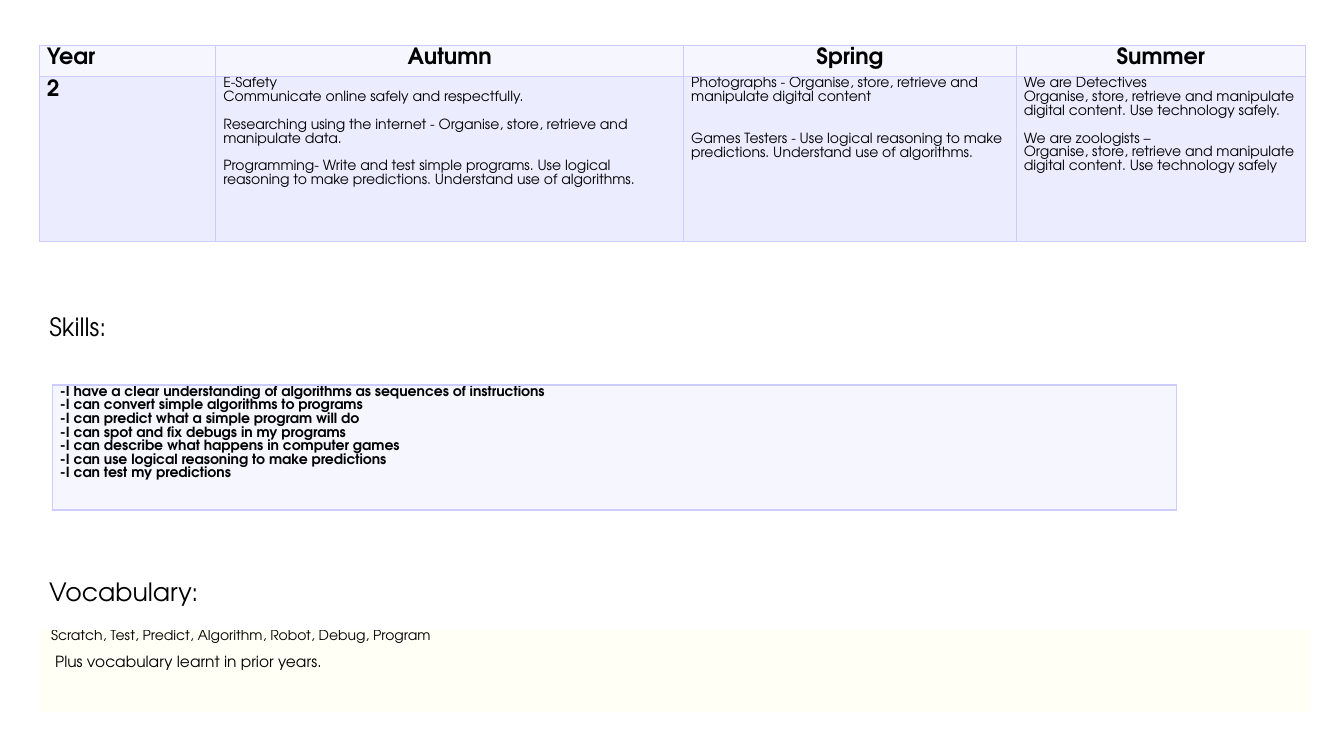
import pptx
import pptx.util
import pptx.dml.color
import pptx.enum.text
import pptx.oxml
import pptx.oxml.ns
import lxml.etree

Cm, Pt = pptx.util.Cm, pptx.util.Pt
ALIGN = pptx.enum.text.PP_ALIGN
FONT = "TeX Gyre Adventor"
COLORS = {"text": "000000", "pale": "F6F6FF", "lilac": "ECECFF",
          "border": "CCCCFF", "cream": "FFFFF6", "white": "FFFFFF"}


def write(tf, lines, size, bold=False, align=ALIGN.LEFT, spacing=None):
    for i, line in enumerate(lines):
        p = tf.paragraphs[0] if i == 0 else tf.add_paragraph()
        p.text = line
        p.alignment = align
        p.line_spacing = spacing
        font = p.runs[0].font
        font.name, font.size, font.bold = FONT, Pt(size), bold
        font.color.rgb = pptx.dml.color.RGBColor.from_string(COLORS["text"])


def add_grid(s, left, top, widths, heights, fills, border, inset):
    shape = s.shapes.add_table(len(heights), len(widths), Cm(left), Cm(top),
                               Cm(sum(widths)), Cm(sum(heights)))
    table = shape.table
    table.first_row = table.horz_banding = False
    for column, width in zip(table.columns, widths):
        column.width = Cm(width)
    for row, height, fill in zip(table.rows, heights, fills):
        row.height = Cm(height)
        for cell in row.cells:
            cell.margin_left = cell.margin_right = Cm(inset)
            cell.margin_top = cell.margin_bottom = 0
            tcPr = cell._tc.get_or_add_tcPr()
            for side in ("lnL", "lnR", "lnT", "lnB"):
                ln = lxml.etree.SubElement(tcPr, pptx.oxml.ns.qn("a:" + side), w="12700")
                solid = lxml.etree.SubElement(ln, pptx.oxml.ns.qn("a:solidFill"))
                lxml.etree.SubElement(solid, pptx.oxml.ns.qn("a:srgbClr"), val=COLORS[border])
            cell.fill.solid()
            cell.fill.fore_color.rgb = pptx.dml.color.RGBColor.from_string(COLORS[fill])
    return table


prs = pptx.Presentation()
prs.slide_width, prs.slide_height = Cm(33.87), Cm(19.05)
s = prs.slides.add_slide(prs.slide_layouts[5])

year_plan = add_grid(s, 0.99, 1.14, [4.45, 11.79, 8.38, 7.29], [0.79, 4.15],
                     ["pale", "lilac"], "border", 0.19)
for i, heading in enumerate(["Year", "Autumn", "Spring", "Summer"]):
    write(year_plan.cell(0, i).text_frame, [heading], 16, True,
          ALIGN.CENTER if i else ALIGN.LEFT, 1.15)
write(year_plan.cell(1, 0).text_frame, ["2"], 16, True, spacing=1.15)

terms = [
    (["E-Safety",
      "Communicate online safely and respectfully.",
      "Researching using the internet - Organise, store, retrieve and manipulate data.",
      "Programming- Write and test simple programs. Use logical reasoning to make "
      "predictions. Understand use of algorithms."], {2: 10, 3: 10}),
    (["Photographs - Organise, store, retrieve and manipulate digital content",
      "Games Testers - Use logical reasoning to make predictions. "
      "Understand use of algorithms."], {1: 20}),
    (["We are Detectives",
      "Organise, store, retrieve and manipulate digital content. Use technology safely.",
      "We are zoologists –",
      "Organise, store, retrieve and manipulate digital content. Use technology safely"],
     {2: 10}),
]
for column, (lines, gaps) in enumerate(terms, 1):
    tf = year_plan.cell(1, column).text_frame
    write(tf, lines, 10, spacing=1.07)
    for i, gap in gaps.items():
        tf.paragraphs[i].space_before = Pt(gap)

title = s.shapes.title
title.left, title.top, title.width, title.height = Cm(0.99), Cm(7.72), Cm(30.63), Cm(1.8)
title.text_frame.vertical_anchor = pptx.enum.text.MSO_ANCHOR.TOP
write(title.text_frame, ["Skills:"], 18)

skills = add_grid(s, 1.32, 9.7, [28.32], [3.15], ["pale"], "border", 0.19)
write(skills.cell(0, 0).text_frame, [
    "-I have a clear understanding of algorithms as sequences of instructions",
    "-I can convert simple algorithms to programs",
    "-I can predict what a simple program will do",
    "-I can spot and fix debugs in my programs",
    "-I can describe what happens in computer games",
    "-I can use logical reasoning to make predictions",
    "-I can test my predictions"], 10, True, spacing=1.07)

tb = s.shapes.add_textbox(Cm(0.99), Cm(14.4), Cm(7.21), Cm(1.02))
tb.text_frame.word_wrap = True
write(tb.text_frame, ["Vocabulary:"], 18)

vocabulary = add_grid(s, 0.99, 15.87, [32.05], [2.08], ["cream"], "white", 0.3)
tf = vocabulary.cell(0, 0).text_frame
write(tf, ["Scratch, Test, Predict, Algorithm, Robot, Debug, Program",
           "Plus vocabulary learnt in prior years."], 10, spacing=1.07)
for p in tf.paragraphs:
    p.space_after = Pt(8)
p.runs[0].font.size = Pt(11)
p._p.get_or_add_pPr().set("marL", str(Cm(0.1)))

prs.save("out.pptx")
